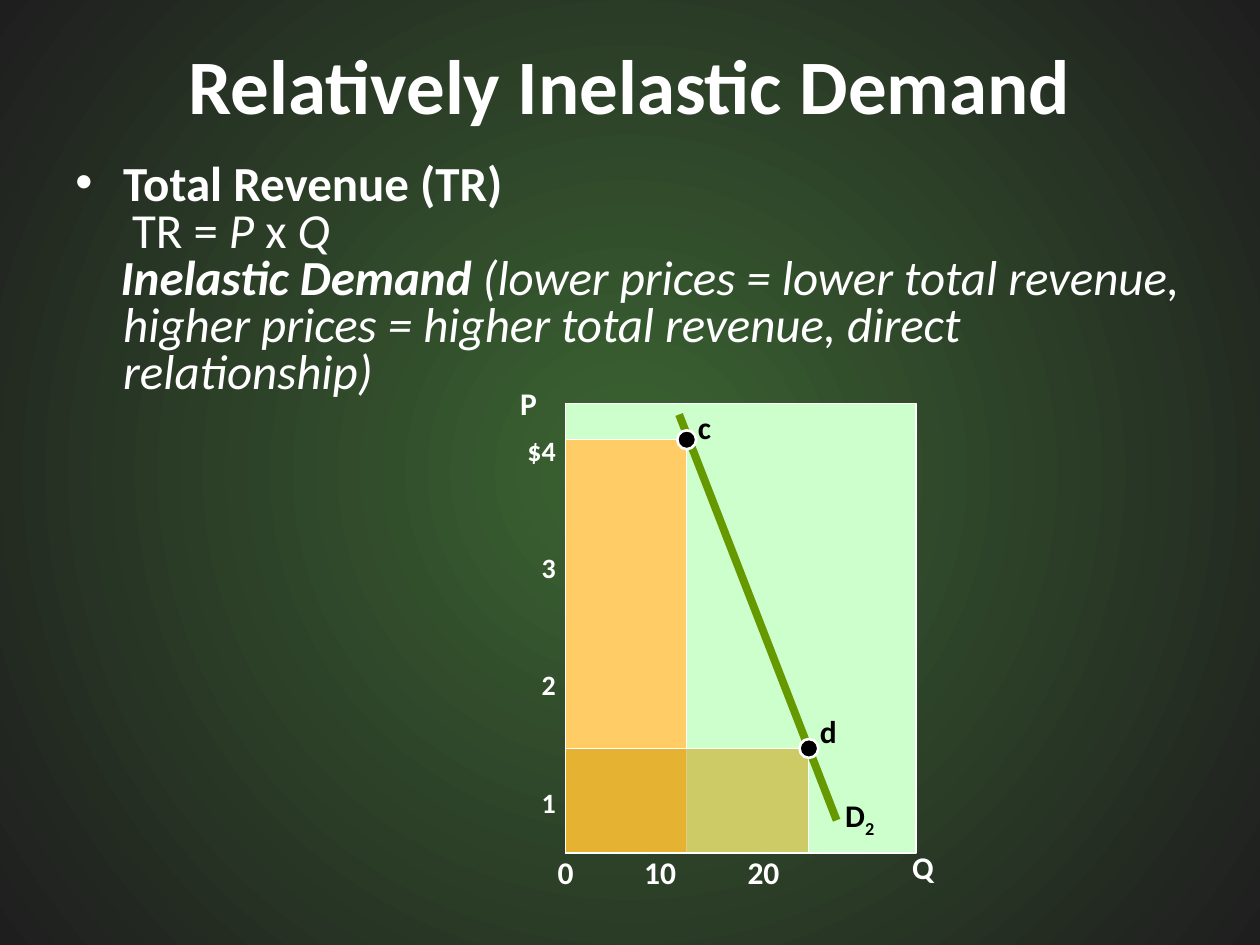
from lxml import etree
from pptx import Presentation
from pptx.dml.color import RGBColor
from pptx.enum import shapes, text
from pptx.oxml import ns
from pptx.util import Inches, Pt

COLORS = {
    "glow": "3B6432", "edge": "1E1E1E", "white": "FFFFFF", "black": "000000",
    "plot": "CCFFCC", "high_price": "FFCC66", "low_price": "CC9900",
    "demand": "669900",
}
LEFT, CENTER, RIGHT = (text.PP_ALIGN.LEFT, text.PP_ALIGN.CENTER,
                       text.PP_ALIGN.RIGHT)


def color(name):
    return RGBColor.from_string(COLORS[name])


def add_xml(parent, tag, **attributes):
    return etree.SubElement(parent, ns.qn(tag), attributes)


class SlideBuilder:
    font_name = "Calibri"

    def __init__(self, slide):
        self.slide = slide

    def background(self, inner, outer):
        fill = self.slide.background.fill
        fill.gradient()
        for stop, name, position in zip(fill.gradient_stops, (inner, outer), (0, 1)):
            stop.color.rgb = color(name)
            stop.position = position
        # Turn the linear gradient into a circular one
        linear = self.slide.element.find(".//" + ns.qn("a:lin"))
        gradient = linear.getparent()
        gradient.remove(linear)
        circle = add_xml(gradient, "a:path", path="circle")
        add_xml(circle, "a:fillToRect", l="50000", t="50000", r="50000", b="50000")

    def style(self, paragraph, size, name="white", bold=None):
        font = paragraph.font
        font.name, font.size, font.bold = self.font_name, Pt(size), bold
        font.color.rgb = color(name)

    def text_box(self, left, top, width, height, wrap=False):
        shape = self.slide.shapes.add_textbox(
            Inches(left), Inches(top), Inches(width), Inches(height))
        shape.text_frame.word_wrap = wrap
        return shape.text_frame

    def label(self, words, left, top, width, height=0.4, size=18,
              name="white", align=LEFT, subscript=None):
        frame = self.text_box(left, top, width, height)
        frame.vertical_anchor = text.MSO_ANCHOR.MIDDLE
        paragraph = frame.paragraphs[0]
        paragraph.alignment = align
        self.style(paragraph, size, name, bold=True)
        paragraph.add_run().text = words
        if subscript:
            run = paragraph.add_run()
            run.text = subscript
            run.font._element.set("baseline", "-25000")

    def body(self, left, top, width, height, lines, size=28):
        frame = self.text_box(left, top, width, height, wrap=True)
        for index, (margin, indent, bullet, runs) in enumerate(lines):
            paragraph = frame.add_paragraph() if index else frame.paragraphs[0]
            paragraph.line_spacing = 0.8
            properties = paragraph._p.get_or_add_pPr()
            properties.set("marL", str(Inches(margin)))
            properties.set("indent", str(Inches(indent)))
            if bullet:
                add_xml(properties, "a:buFont", typeface="Arial")
                add_xml(properties, "a:buChar", char=bullet)
            self.style(paragraph, size)
            for words, bold, italic in runs:
                run = paragraph.add_run()
                run.text = words
                run.font.bold, run.font.italic = bold, italic

    def area(self, kind, left, top, right, bottom, fill, line_width=0.75, alpha=None):
        shape = self.slide.shapes.add_shape(
            kind, Inches(left), Inches(top), Inches(right - left), Inches(bottom - top))
        shape.shadow.inherit = False
        shape.fill.solid()
        shape.fill.fore_color.rgb = color(fill)
        shape.line.color.rgb = color("white")
        shape.line.width = Pt(line_width)
        if alpha is not None:
            solid = shape._element.spPr.find(ns.qn("a:solidFill"))
            add_xml(solid[0], "a:alpha", val=str(alpha * 1000))

    def rectangle(self, *edges, fill, alpha=None):
        self.area(shapes.MSO_SHAPE.RECTANGLE, *edges, fill, alpha=alpha)

    def dot(self, x, y, radius=0.075):
        self.area(shapes.MSO_SHAPE.OVAL, x - radius, y - radius,
                  x + radius, y + radius, "black", line_width=1.5)

    def line(self, start, end, name, width):
        connector = self.slide.shapes.add_connector(
            shapes.MSO_CONNECTOR.STRAIGHT, *map(Inches, start + end))
        connector.line.color.rgb = color(name)
        connector.line.width = Pt(width)
        add_xml(connector._element.spPr, "a:effectLst")


def main():
    presentation = Presentation()
    presentation.slide_width, presentation.slide_height = Inches(10), Inches(7.5)
    builder = SlideBuilder(presentation.slides.add_slide(presentation.slide_layouts[6]))
    builder.background("glow", "edge")

    # Plot area and its axes
    plot_left, plot_top, plot_right, plot_bottom = 4.49, 3.2, 7.27, 6.77
    builder.rectangle(plot_left, plot_top, plot_right, plot_bottom, fill="plot")
    for index, price in enumerate(("$4", "3", "2", "1")):
        builder.label(price, 4.01, 3.39 + 0.93 * index, 0.5, 0.37, size=16, align=RIGHT)
    for quantity, middle in (("0", 4.49), ("10", 5.24), ("20", 6.06)):
        builder.label(quantity, middle - 0.25, 6.72, 0.5, align=CENTER)
    builder.label("Q", 7.14, 6.68, 0.4)
    builder.label("P", 4.03, 3.0, 0.37)

    # Title and explanation
    builder.label("Relatively Inelastic Demand", 0.5, 0, 9, 1.33, size=44, align=CENTER)
    builder.body(0.5, 1.25, 9, 5.45, [
        (0.38, -0.38, "•", [("Total Revenue (TR)", True, False)]),
        (0.45, 0, None, [("TR = ", False, False), ("P ", False, True),
                         ("x", False, False), (" Q", False, True)]),
        (0.38, -0.02, None, [
            ("Inelastic Demand ", True, True),
            ("(lower prices = lower total revenue, higher prices = "
             "higher total revenue, direct relationship)", False, True)]),
    ])

    # Revenue at the high price (c) and the low price (d)
    point_c, point_d = (5.45, 3.49), (6.42, 5.94)
    builder.rectangle(plot_left, point_c[1], point_c[0], plot_bottom, fill="high_price")
    builder.rectangle(plot_left, point_d[1], point_d[0], plot_bottom,
                      fill="low_price", alpha=50)

    # Demand curve with its points
    builder.line((5.39, 3.29), (6.64, 6.51), "demand", 4.5)
    builder.label("c", 5.44, 3.19, 0.31, name="black")
    builder.label("d", 6.41, 5.6, 0.34, name="black")
    builder.label("D", 6.61, 6.29, 0.45, name="black", subscript="2")
    for point in (point_c, point_d):
        builder.dot(*point)

    presentation.save("out.pptx")


if __name__ == "__main__":
    main()
